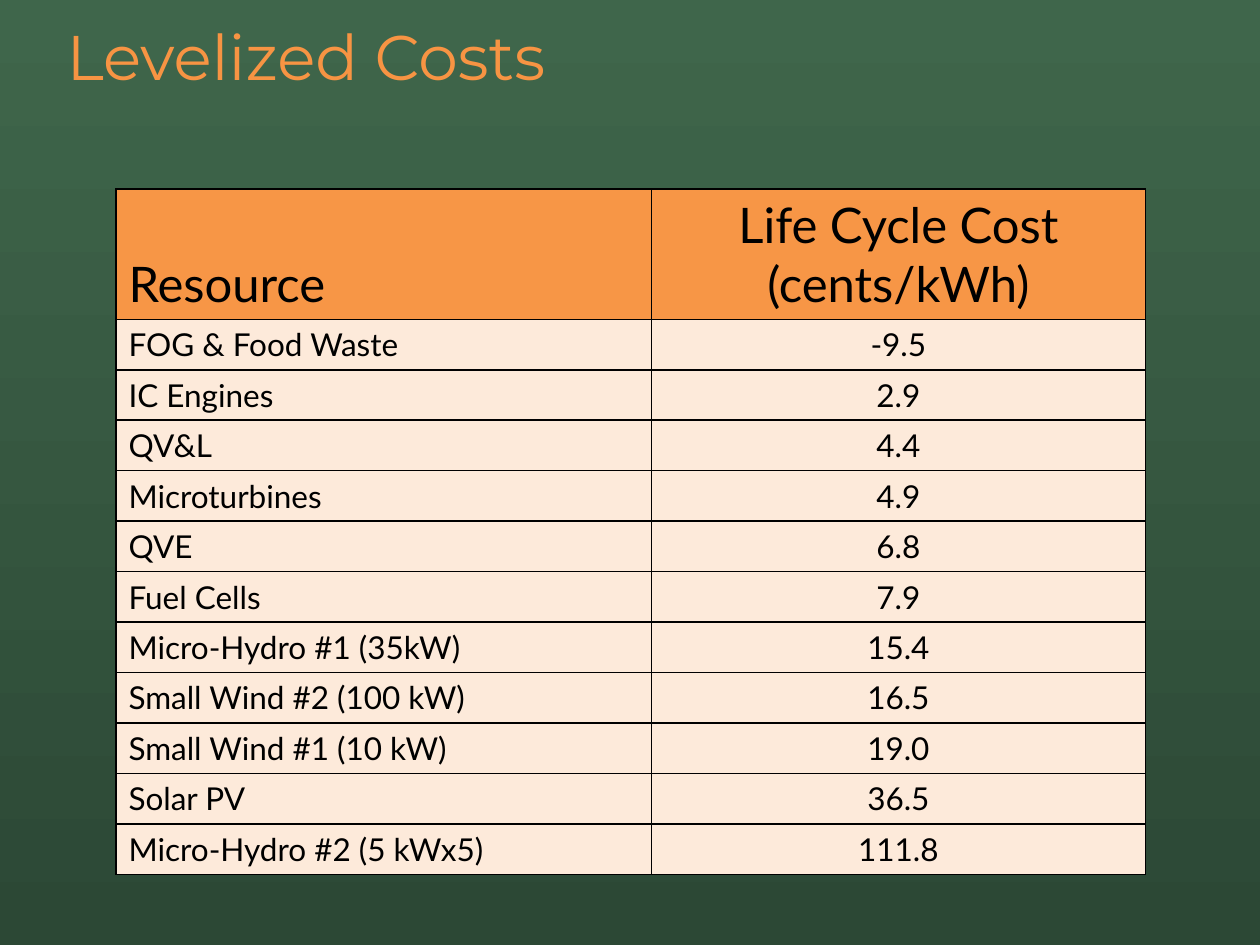
from dataclasses import dataclass

from lxml import etree
from pptx import Presentation, util as u
from pptx.dml.color import RGBColor
from pptx.enum import text
from pptx.oxml import ns

COLUMNS, ROWS = 100, 75  # slide grid
HEADER = ("Resource", "Life Cycle Cost\n(cents/kWh)")
COSTS = (
    ("FOG & Food Waste", "-9.5"),
    ("IC Engines", "2.9"),
    ("QV&L", "4.4"),
    ("Microturbines", "4.9"),
    ("QVE", "6.8"),
    ("Fuel Cells", "7.9"),
    ("Micro-Hydro #1 (35kW)", "15.4"),
    ("Small Wind #2 (100 kW)", "16.5"),
    ("Small Wind #1 (10 kW)", "19.0"),
    ("Solar PV", "36.5"),
    ("Micro-Hydro #2 (5 kWx5)", "111.8"),
)


@dataclass(frozen=True)
class Theme:
    background: tuple = ("3F664B", "2C4835")
    title: str = "F79443"
    header_fill: str = "F79646"
    body_fill: str = "FDEADA"
    ink: str = "000000"
    title_font: str = "Montserrat"
    table_font: str = "Lato"
    title_size: int = 36
    header_size: int = 28
    body_size: int = 18
    border_width: int = 1


def write(frame, words, *, font, size, color, align=text.PP_ALIGN.LEFT,
          line_spacing=None):
    """Fill a text frame, one paragraph per line of words."""
    frame.text = words
    for paragraph in frame.paragraphs:
        paragraph.alignment = align
        if line_spacing:
            paragraph.line_spacing = u.Pt(line_spacing)
        for run in paragraph.runs:
            run.font.name = font
            run.font.size = u.Pt(size)
            run.font.color.rgb = RGBColor.from_string(color)


class SlideBuilder:
    def __init__(self, deck, theme):
        self.theme = theme
        self.column = deck.slide_width / COLUMNS
        self.row = deck.slide_height / ROWS
        self.slide = deck.slides.add_slide(deck.slide_layouts[6])

    def place(self, left, top, width, height):
        """Turn grid columns and rows into lengths."""
        return (round(left * self.column), round(top * self.row),
                round(width * self.column), round(height * self.row))

    def background(self):
        fill = self.slide.background.fill
        fill.gradient()
        fill.gradient_angle = 270
        for stop, color in zip(fill.gradient_stops, self.theme.background):
            stop.color.rgb = RGBColor.from_string(color)

    def title(self, words, area):
        frame = self.slide.shapes.add_textbox(*self.place(*area)).text_frame
        frame.word_wrap = True
        frame.vertical_anchor = text.MSO_ANCHOR.MIDDLE
        write(frame, words, font=self.theme.title_font, size=self.theme.title_size,
              color=self.theme.title, line_spacing=32)

    def border(self, cell):
        """Line all four sides; borders must come before the cell's fill."""
        properties = cell._tc.get_or_add_tcPr()
        for side in ("lnL", "lnR", "lnT", "lnB"):
            line = etree.SubElement(properties, ns.qn(f"a:{side}"),
                                    w=str(u.Pt(self.theme.border_width)))
            solid = etree.SubElement(line, ns.qn("a:solidFill"))
            etree.SubElement(solid, ns.qn("a:srgbClr"), val=self.theme.ink)

    def cell(self, cell, words, *, fill, size, align):
        self.border(cell)
        cell.fill.solid()
        cell.fill.fore_color.rgb = RGBColor.from_string(fill)
        cell.margin_left = cell.margin_right = u.Inches(0.1)
        cell.margin_top = cell.margin_bottom = u.Inches(0.05)
        cell.vertical_anchor = text.MSO_ANCHOR.BOTTOM
        write(cell.text_frame, words, font=self.theme.table_font, size=size,
              color=self.theme.ink, align=align)

    def table(self, header, body, *, left, top, widths, header_height, body_height):
        heights = [header_height] + [body_height] * len(body)
        area = self.place(left, top, sum(widths), sum(heights))
        table = self.slide.shapes.add_table(len(heights), len(widths), *area).table
        table.first_row = table.horz_banding = False
        for column, width in zip(table.columns, widths):
            column.width = round(width * self.column)
        for row, height in zip(table.rows, heights):
            row.height = round(height * self.row)

        aligns = (text.PP_ALIGN.LEFT, text.PP_ALIGN.CENTER)
        for i, entries in enumerate((header, *body)):
            fill, size = ((self.theme.body_fill, self.theme.body_size) if i
                          else (self.theme.header_fill, self.theme.header_size))
            for j, (words, align) in enumerate(zip(entries, aligns)):
                self.cell(table.cell(i, j), words, fill=fill, size=size, align=align)


def main():
    deck = Presentation()
    deck.slide_width, deck.slide_height = u.Inches(10), u.Inches(7.5)
    builder = SlideBuilder(deck, Theme())
    builder.background()
    builder.title("Levelized Costs", (4.3, 0, 89.3, 10.4))
    builder.table(HEADER, COSTS, left=9.2, top=15, widths=(42.5, 39.2),
                  header_height=10.3, body_height=4)
    deck.save("out.pptx")


if __name__ == "__main__":
    main()
